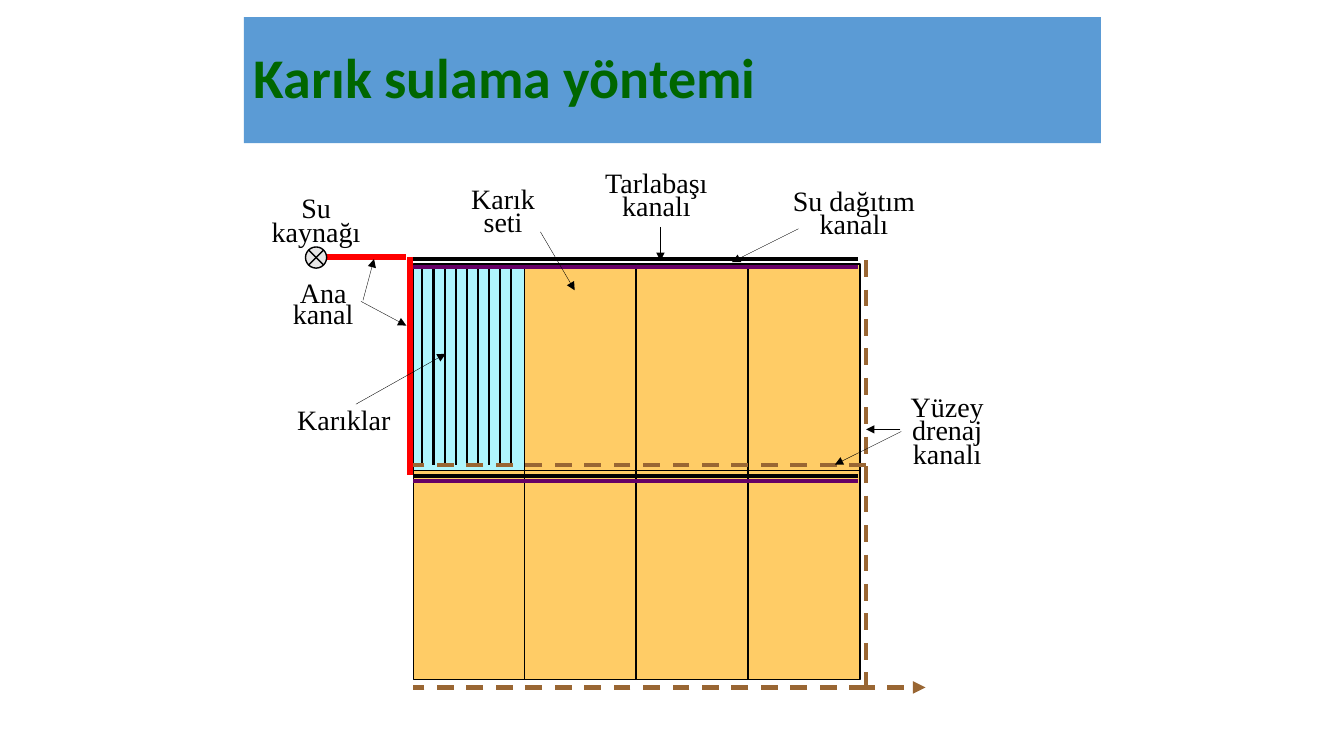
import dataclasses

import lxml.etree
import pptx
import pptx.dml.color
import pptx.enum.dml
import pptx.enum.shapes
import pptx.enum.text
import pptx.oxml.ns
import pptx.util

EMU_PER_PX = 9144  # 100 px to the inch


@dataclasses.dataclass(frozen=True)
class Theme:
    banner: str = "5B9BD5"
    title: str = "006600"
    ink: str = "000000"
    field: str = "FFCC66"
    irrigated: str = "AFF6FD"
    source: str = "E7E6E6"
    main_canal: str = "FF0000"
    distribution: str = "660066"
    drain: str = "996633"
    title_font: str = "Calibri"
    label_font: str = "Times New Roman"
    title_size: int = 40
    label_size: int = 20
    pointer_width: float = 0.25
    outline_width: float = 1
    furrow_width: float = 1.5
    canal_width: float = 3
    main_width: float = 4.5


THEME = Theme()
SHAPES = pptx.enum.shapes.MSO_SHAPE

# Plot grid
FIELD_LEFT, FIELD_RIGHT = 410, 851
COLUMN_PITCH = 110.5
ROW_TOPS = (262, 467)
PLOT_WIDTH, PLOT_HEIGHT = 111, 207
FURROW_LEFT, FURROW_PITCH, FURROW_COUNT = 419, 11, 9
DRAIN_X = 859

# Left, top, width, height, line spacing, lines of text
LABELS = (
    (259, 193, 109, 57, 0.7, ("Su", "kaynağı")),
    (590, 168, 122, 57, 0.7, ("Tarlabaşı", "kanalı")),
    (776, 186, 142, 57, 0.7, ("Su dağıtım", "kanalı")),
    (280, 280, 81, 51, 0.6, ("Ana", "kanal")),
    (457, 184, 84, 57, 0.7, ("Karık", "seti")),
    (284, 394, 114, 44, 1.0, ("Karıklar",)),
    (893, 390, 93, 81, 0.7, ("Yüzey", "drenaj", "kanalı")),
)

# Start and tip of each label's pointer
POINTERS = (
    ((655, 225), (655, 259)),
    ((360, 298), (371, 257)),
    ((358, 299), (403, 323)),
    ((893, 426), (859, 426)),
    ((353, 401), (442, 351)),
    ((536, 230), (570, 288)),
    ((792, 227), (726, 260)),
    ((894, 428), (828, 461)),
)


def px(length):
    return pptx.util.Emu(length * EMU_PER_PX)


def colour(code):
    return pptx.dml.color.RGBColor.from_string(code)


def add_block(page, kind, left, top, width, height, fill, outlined=True):
    shape = page.shapes.add_shape(kind, px(left), px(top), px(width), px(height))
    shape.shadow.inherit = False
    shape.fill.solid()
    shape.fill.fore_color.rgb = colour(fill)
    if outlined:
        shape.line.color.rgb = colour(THEME.ink)
        shape.line.width = pptx.util.Pt(THEME.outline_width)
    else:
        shape.line.fill.background()
    return shape


def add_line(page, start, end, code, width, dashed=False, arrow=False):
    line = page.shapes.add_connector(
        pptx.enum.shapes.MSO_CONNECTOR.STRAIGHT, *map(px, start + end))
    line.line.color.rgb = colour(code)
    line.line.width = pptx.util.Pt(width)
    if dashed:
        line.line.dash_style = pptx.enum.dml.MSO_LINE.DASH
    if arrow:
        outline = line.line._get_or_add_ln()
        lxml.etree.SubElement(
            outline, pptx.oxml.ns.qn("a:tailEnd"), type="triangle")
    properties = line._element.spPr
    lxml.etree.SubElement(properties, pptx.oxml.ns.qn("a:effectLst"))


def style_para(para, font, size, code, spacing, align, bold=False):
    para.alignment = align
    para.line_spacing = spacing
    para.font.name = font
    para.font.size = pptx.util.Pt(size)
    para.font.color.rgb = colour(code)
    para.font.bold = bold


def add_title(page, text):
    banner = add_block(page, SHAPES.RECTANGLE, 242, 17, 850, 125,
                       THEME.banner, outlined=False)
    frame = banner.text_frame
    frame.vertical_anchor = pptx.enum.text.MSO_ANCHOR.MIDDLE
    frame.text = text
    style_para(frame.paragraphs[0], THEME.title_font, THEME.title_size,
               THEME.title, 0.9, pptx.enum.text.PP_ALIGN.LEFT, bold=True)


def add_label(page, left, top, width, height, spacing, lines):
    box = page.shapes.add_textbox(px(left), px(top), px(width), px(height))
    frame = box.text_frame
    frame.word_wrap = False
    frame.vertical_anchor = pptx.enum.text.MSO_ANCHOR.MIDDLE
    frame.text = "\n".join(lines)
    for para in frame.paragraphs:
        style_para(para, THEME.label_font, THEME.label_size, THEME.ink,
                   spacing, pptx.enum.text.PP_ALIGN.CENTER)


def add_plots(page):
    for row, top in enumerate(ROW_TOPS):
        for column in range(4):
            left = FIELD_LEFT + round(column * COLUMN_PITCH)
            fill = THEME.irrigated if row == column == 0 else THEME.field
            add_block(page, SHAPES.RECTANGLE, left, top,
                      PLOT_WIDTH, PLOT_HEIGHT, fill)
    for index in range(FURROW_COUNT):
        x = FURROW_LEFT + index * FURROW_PITCH
        add_line(page, (x, 262), (x, 461), THEME.ink, THEME.furrow_width)


def add_canals(page):
    # Head ditches and distribution canals
    for y, code in ((257, THEME.ink), (472, THEME.ink),
                    (265, THEME.distribution), (477, THEME.distribution)):
        add_line(page, (FIELD_RIGHT, y), (FIELD_LEFT, y), code,
                 THEME.canal_width)
    # Surface drains
    for start, end, arrow in (
            ((DRAIN_X, 258), (DRAIN_X, 690), False),
            ((DRAIN_X, 461), (FIELD_LEFT, 461), False),
            ((DRAIN_X, 682), (FIELD_LEFT, 682), False),
            ((FIELD_RIGHT, 682), (918, 682), True)):
        add_line(page, start, end, THEME.drain, THEME.canal_width,
                 dashed=True, arrow=arrow)
    # Main canal and water source
    add_line(page, (407, 255), (407, 471), THEME.main_canal, THEME.main_width)
    add_line(page, (403, 255), (324, 255), THEME.main_canal, THEME.main_width)
    add_block(page, SHAPES.FLOWCHART_SUMMING_JUNCTION, 303, 245, 21, 21,
              THEME.source)


def main():
    deck = pptx.Presentation()
    deck.slide_width, deck.slide_height = px(1333), px(750)
    page = deck.slides.add_slide(deck.slide_layouts[6])

    add_title(page, "Karık sulama yöntemi")
    add_plots(page)
    add_canals(page)
    for label in LABELS:
        add_label(page, *label)
    for start, tip in POINTERS:
        add_line(page, start, tip, THEME.ink, THEME.pointer_width, arrow=True)

    deck.save("out.pptx")


if __name__ == "__main__":
    main()
